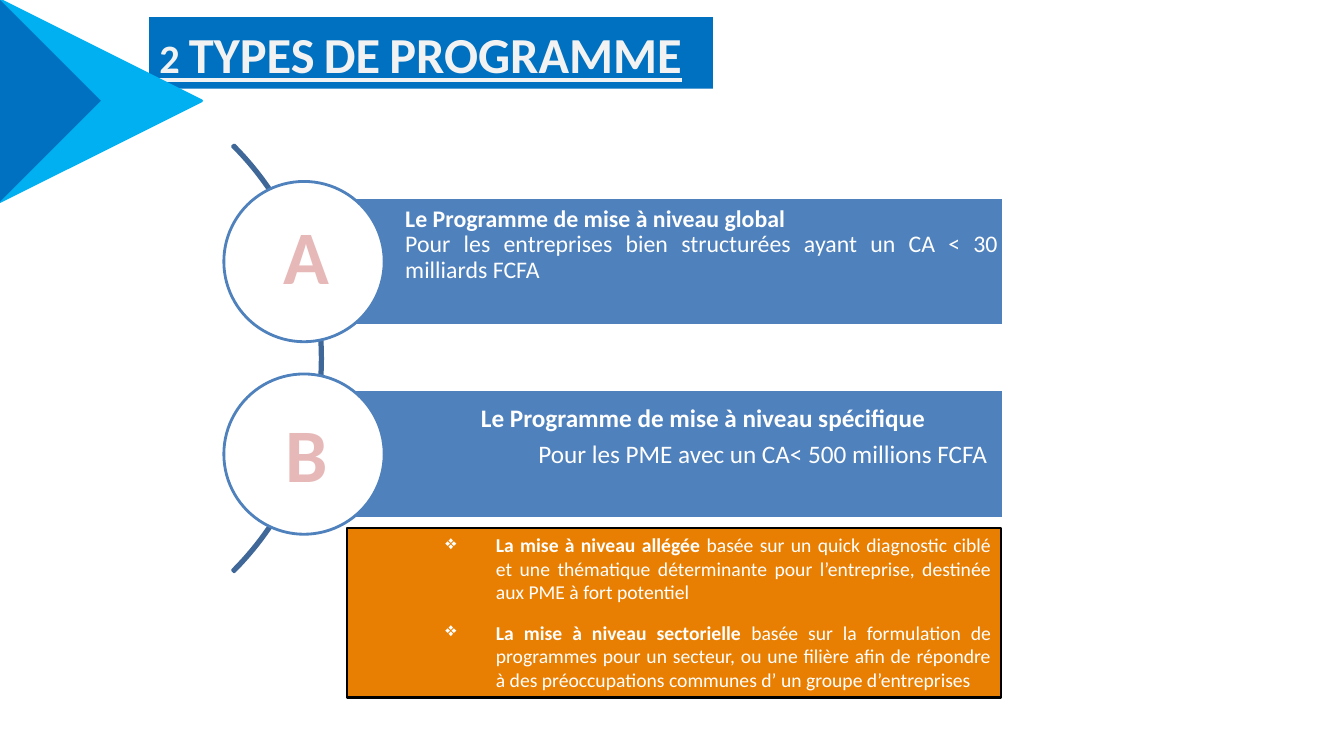
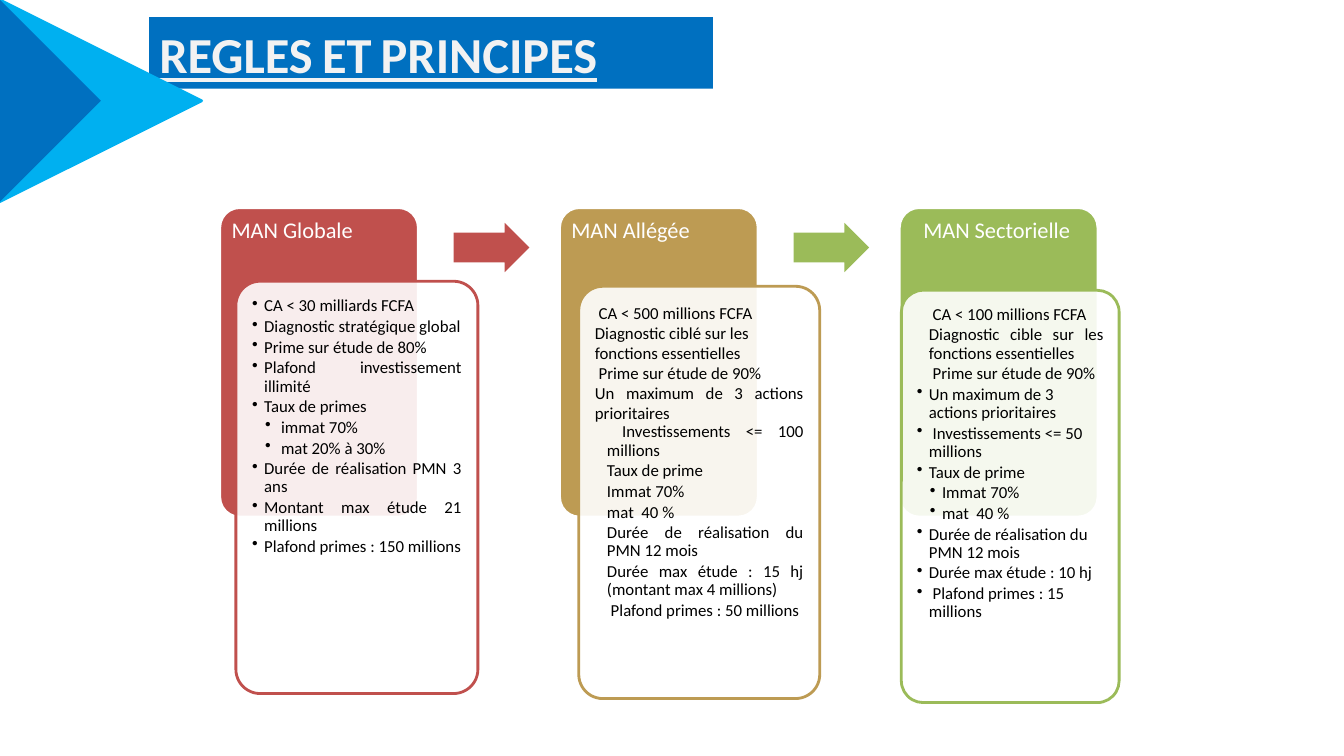
"""Build two slides on upgrade programme types and their rules."""
from lxml import etree
from pptx import Presentation
from pptx import util as u
from pptx.dml.color import RGBColor
from pptx.enum import shapes, text
from pptx.oxml.ns import qn

LEFT, MID, JUST = text.PP_ALIGN.LEFT, text.PP_ALIGN.CENTER, text.PP_ALIGN.JUSTIFY
TOP, HALF = text.MSO_ANCHOR.TOP, text.MSO_ANCHOR.MIDDLE
KIND = shapes.MSO_SHAPE

THEME = dict(
    font="Calibri", white="FFFFFF", black="000000", band="0070C0", sky="00B0F0",
    pale="F2F2F2", bar="4F81BD", arc="3F6797", rose="E6B9B8", red="C0504D",
    gold="BD9B53", green="9BBB59", amber="E97F02",
    title=36, letter=54, lead=17, name=18, note=14, head=16, item=12,
)

STYLES = {
    "lead": dict(size="lead", tint="white", align=JUST),
    "body": dict(size="lead", tint="white", align=JUST, line=0.9, after=0.35),
    "name": dict(size="name", tint="white", left=0.75, line=0.9, after=0.35),
    "goal": dict(size="name", tint="white", left=1.32, line=0.9, after=0.35),
    "note": dict(size="note", tint="white", align=JUST, left=1.38, hang=0.5, after=0.86, mark="❖"),
    "letter": dict(size="letter", tint="rose", align=MID, edge="red"),
    "head": dict(size="head", tint="white", line=0.9),
    "inhead": dict(size="head", tint="white", left=0.12, line=0.9),
    "plain": dict(size="item"),
    "wide": dict(size="item", align=JUST),
    "inset": dict(size="item", align=JUST, left=0.12, line=0.9, after=0.15),
    "dot": dict(size="item", left=0.12, hang=0.12, line=0.9, after=0.15, mark="•"),
    "sub": dict(size="item", left=0.25, hang=0.12, line=0.9, after=0.15, mark="•"),
}
STYLES["dotwide"] = STYLES["dot"] | dict(align=JUST)
STYLES["subwide"] = STYLES["sub"] | dict(align=JUST)

TYPES = [
    dict(mark="A", high=2.02, pad=0.06, lines=[
        ("lead", "*Le Programme de mise à niveau global"),
        ("body", "Pour les entreprises bien structurées ayant un CA < 30 milliards FCFA")]),
    dict(mark="B", high=3.99, pad=0.16, lines=[
        ("name", "*Le Programme de mise à niveau spécifique"),
        ("goal", "Pour les PME avec un CA< 500 millions FCFA")]),
]
NOTES = [
    ("note", "*La mise à niveau allégée |basée sur un quick diagnostic ciblé et une "
     "thématique déterminante pour l’entreprise, destinée aux PME à fort potentiel"),
    ("note", "*La mise à niveau sectorielle |basée sur la formulation de programmes pour "
     "un secteur, ou une filière afin de répondre à des préoccupations communes "
     "d’ un groupe d’entreprises"),
]
RULES = [
    dict(tint="red", head=("head", "MAN Globale"), card=(0.16, 2.79, 2.4), lines=[
        ("dot", "CA < 30 milliards FCFA"),
        ("dot", "Diagnostic stratégique global"),
        ("dotwide", "Prime sur étude de 80%"),
        ("dotwide", "Plafond investissement illimité"),
        ("dotwide", "Taux de primes"),
        ("subwide", " immat 70%"),
        ("subwide", " mat 20% à 30%"),
        ("dotwide", "Durée de réalisation PMN 3 ans"),
        ("dotwide", "Montant max étude 21 millions"),
        ("dotwide", "Plafond primes : 150 millions")]),
    dict(tint="gold", head=("head", "MAN Allégée"), card=(0.19, 2.84, 2.39), lines=[
        ("plain", " CA < 500 millions FCFA"),
        ("plain", "Diagnostic ciblé sur les fonctions essentielles"),
        ("wide", " Prime sur étude de 90%"),
        ("wide", "Un maximum de 3 actions prioritaires"),
        ("inset", " Investissements <= 100 millions"),
        ("inset", "Taux de prime"),
        ("inset", "Immat 70%"),
        ("inset", "mat  40 %"),
        ("inset", "Durée de réalisation du PMN 12 mois"),
        ("inset", "Durée max étude : 15 hj (montant max 4 millions)"),
        ("inset", " Plafond primes : 50 millions")]),
    dict(tint="green", head=("inhead", "MAN Sectorielle"), card=(0.02, 2.88, 2.16), lines=[
        ("inset", " CA < 100 millions FCFA"),
        ("inset", "Diagnostic cible sur les fonctions essentielles"),
        ("inset", " Prime sur étude de 90%"),
        ("dot", "Un maximum de 3 actions prioritaires"),
        ("dot", " Investissements <= 50 millions"),
        ("dot", "Taux de prime"),
        ("sub", "Immat 70%"),
        ("sub", "mat  40 %"),
        ("dot", "Durée de réalisation du PMN 12 mois"),
        ("dot", "Durée max étude : 10 hj"),
        ("dot", " Plafond primes : 15 millions")]),
]
WEDGES = [
    ("sky", (0.38, 0), [(1.51, 0.98), (1.56, 1.04), (1.55, 1.12), (1.5, 1.16)], 2.4),
    ("band", (0.11, 0), [(1.23, 0.97), (1.27, 1.03), (1.27, 1.11), (1.21, 1.15)], 2.16),
]


def tone(key):
    """Return a theme colour."""
    return RGBColor.from_string(THEME[key])


def paint(shape, fill=None, line=None, width=2, alpha=None):
    """Set the fill and outline of a shape."""
    shape.shadow.inherit = False
    if fill:
        shape.fill.solid()
        shape.fill.fore_color.rgb = tone(fill)
    else:
        shape.fill.background()
    if alpha:
        tint = shape.fill._xPr.find(qn("a:solidFill"))[0]
        etree.SubElement(tint, qn("a:alpha"), val=str(alpha * 1000))
    if line:
        shape.line.color.rgb = tone(line)
        shape.line.width = u.Pt(width)
    else:
        shape.line.fill.background()


def trim(run, key):
    """Outline the letters of a run."""
    line = etree.Element(qn("a:ln"), w=str(u.Pt(1.75)))
    fill = etree.SubElement(line, qn("a:solidFill"))
    etree.SubElement(fill, qn("a:srgbClr"), val=THEME[key])
    run._r.get_or_add_rPr().insert(0, line)


def ink(run, size, tint, **more):
    """Format one run."""
    look = dict(name=THEME["font"], size=u.Pt(THEME[size]), **more)
    for key, val in look.items():
        setattr(run.font, key, val)
    run.font.color.rgb = tone(tint)


def write(shape, lines, pads=(0.1, 0.05, 0.1, 0.05), anchor=TOP):
    """Write styled lines; a star marks bold and a bar splits runs."""
    frame = shape.text_frame
    sides = ("margin_left", "margin_top", "margin_right", "margin_bottom")
    look = dict(zip(sides, map(u.Inches, pads)), word_wrap=True, vertical_anchor=anchor)
    for key, val in look.items():
        setattr(frame, key, val)
    for i, (style, words) in enumerate(lines):
        form = STYLES[style]
        para = frame.add_paragraph() if i else frame.paragraphs[0]
        para.alignment = form.get("align", LEFT)
        if "line" in form:
            para.line_spacing = form["line"]
        para.space_after = u.Pt(round(form.get("after", 0) * THEME[form["size"]], 1))
        props = para._p.get_or_add_pPr()
        props.set("marL", str(u.Inches(form.get("left", 0))))
        props.set("indent", str(-u.Inches(form.get("hang", 0))))
        if "mark" in form:
            etree.SubElement(props, qn("a:buChar"), char=form["mark"])
        for part in words.split("|"):
            run = para.add_run()
            run.text = part.removeprefix("*")
            ink(run, form["size"], form.get("tint", "black"), bold=part.startswith("*"))
            if "edge" in form:
                trim(run, form["edge"])


def add(slide, kind, box, adj=(), **look):
    """Add a painted preset shape."""
    shape = slide.shapes.add_shape(kind, *map(u.Inches, box))
    for i, val in enumerate(adj):
        shape.adjustments[i] = val
    paint(shape, **look)
    return shape


def curve(ends, steps=8):
    """Sample a cubic curve."""
    for n in range(steps + 1):
        t = n / steps
        mix = ((1 - t) ** 3, 3 * t * (1 - t) ** 2, 3 * t * t * (1 - t), t ** 3)
        yield tuple(sum(m * p[k] for m, p in zip(mix, ends)) for k in (0, 1))


def start(deck, words):
    """Add a slide with the corner wedges and the title band."""
    slide = deck.slides.add_slide(deck.slide_layouts[5])
    for tint, peak, tip, foot in WEDGES:
        pen = slide.shapes.build_freeform(0, 0, scale=u.Inches(1))
        pen.add_line_segments([peak, *curve(tip), (0, foot)])
        paint(pen.convert_to_shape(), tint, "sky" if tint == "sky" else None)
    title = slide.shapes.title
    place = zip(("left", "top", "width", "height"), (1.48, 0.17, 5.59, 0.71))
    for key, val in place:
        setattr(title, key, u.Inches(val))
    title.fill.solid()
    title.fill.fore_color.rgb = tone("band")
    frame = title.text_frame
    frame.auto_size = text.MSO_AUTO_SIZE.NONE
    frame.vertical_anchor = HALF
    para = frame.paragraphs[0]
    para.alignment = LEFT
    run = para.add_run()
    run.text = words
    ink(run, "title", "pale", bold=True, underline=True)
    run._r.get_or_add_rPr().set("cap", "small")
    return slide


def types(deck):
    """Draw the two programme types."""
    slide = start(deck, "2 TYPES DE PROGRAMME")
    add(slide, KIND.BLOCK_ARC, (-2.79, 0.56, 5.99, 5.99), (189, 27, 0.004), line="arc")
    for i, row in enumerate(TYPES):
        y = 1.96 + 1.91 * i
        bar = add(slide, KIND.RECTANGLE, (3.01, y, 6.94, 1.27), fill="bar", line="white")
        write(bar, row["lines"], (1.01, row["pad"], 0.05, 0.05))
        add(slide, KIND.OVAL, (2.22, y - 0.16, 1.59, 1.59), fill="white", line="bar")
    box = add(slide, KIND.RECTANGLE, (3.44, 5.24, 6.49, 1.68),
              fill="amber", line="black", width=1.5)
    write(box, NOTES)
    for row in TYPES:
        place = map(u.Inches, (2.57, row["high"], 0.94, 1.01))
        write(slide.shapes.add_textbox(*place), [("letter", "*" + row["mark"])])


def rules(deck):
    """Draw the three columns of rules."""
    slide = start(deck, "REGLES ET PRINCIPES")
    for i, col in enumerate(RULES):
        x, tint = 2.18 + 3.37 * i, col["tint"]
        back = add(slide, KIND.ROUNDED_RECTANGLE, (x, 2.06, 1.97, 3.07), (0.1,),
                   fill=tint, line="white")
        write(back, [col["head"]], (0.06, 0.06, 0.06, 0.06))
        dx, y, wide = col["card"]
        card = add(slide, KIND.ROUNDED_RECTANGLE, (x + dx, y, wide, 4.09), (0.1,),
                   fill="white", line=tint, alpha=90)
        write(card, col["lines"], (0.09,) * 4)
        if i < len(RULES) - 1:
            hue = ("red", "green")[i]
            add(slide, KIND.RIGHT_ARROW, (x + 2.32, 2.21, 0.75, 0.49), (0.6, 0.5), fill=hue)


def main():
    """Build and save the deck."""
    deck = Presentation()
    deck.slide_width, deck.slide_height = u.Inches(13.33), u.Inches(7.5)
    types(deck)
    rules(deck)
    deck.save("out.pptx")


if __name__ == "__main__":
    main()
